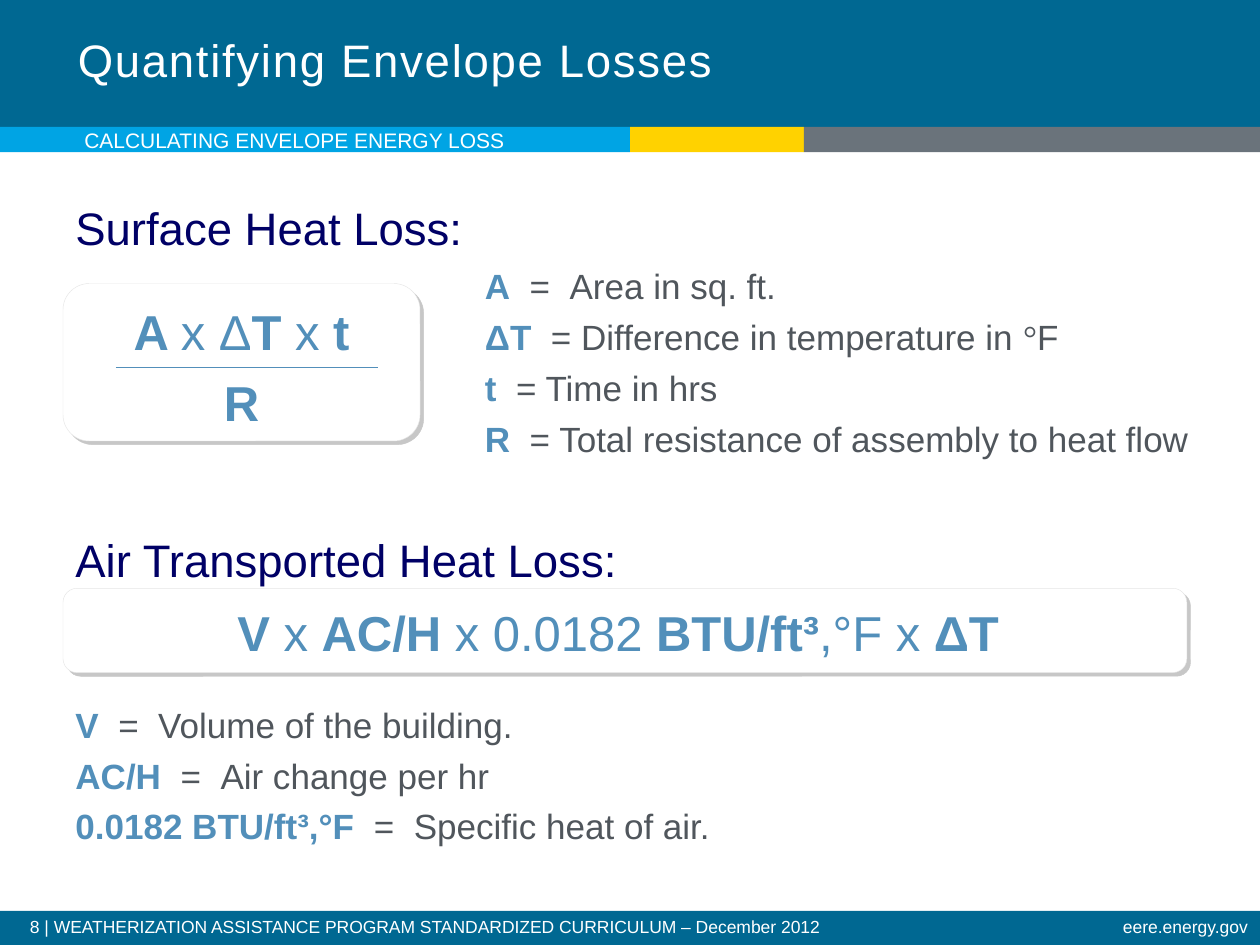
from lxml import etree
from pptx import Presentation
from pptx.dml.color import RGBColor
from pptx.enum.shapes import MSO_CONNECTOR as Connector, MSO_SHAPE as Shape
from pptx.enum.text import MSO_ANCHOR as Anchor, PP_ALIGN as Align
from pptx.oxml import parse_xml
from pptx.oxml.ns import nsdecls, qn
from pptx.util import Pt

WIDTH, HEIGHT = 720, 540
NAVY, TEAL, BLUE, GREY, WHITE = "000066", "006892", "528FBA", "50565C", "FFFFFF"

# Content: left, top, width, height, colour
BANDS = [
    (0, 0, WIDTH, 72.6, TEAL),
    (0, 520.5, WIDTH, 19.5, TEAL),
    (0, 72.6, 360, 14.4, "00A4E4"),
    (360, 72.6, 99.4, 14.4, "FFD200"),
    (459.4, 72.6, 260.6, 14.4, "6A737B"),
]
TITLE = "Quantifying Envelope Losses"
SECTION = "CALCULATING ENVELOPE ENERGY LOSS"
FOOTER = "8 | WEATHERIZATION ASSISTANCE PROGRAM STANDARDIZED CURRICULUM – December 2012"
SITE = "eere.energy.gov"
HEADINGS = [("Surface Heat Loss:", 110.5), ("Air Transported Heat Loss:", 300.5)]

# Formula lines: (text, bold) pairs
FORMULAS = [
    ((36, 162, 204, 90), [
        [("A ", True), ("x Δ", False), ("T ", True), ("x", False), (" t", True)],
        [("R", True)],
    ]),
    ((36, 336.2, 642.2, 48.2), [
        [("V", True), (" x ", False), ("AC/H ", True), ("x 0.0182 ", False),
         ("BTU/ft³", True), (",°F x ", False), ("ΔT ", True)],
    ]),
]
FRACTION_BAR = (66.2, 210.2, 216, 210.2)

# Definitions: term, wide gap after the equals sign, meaning
DEFINITIONS = [
    ((270, 145.4, 420, 119), [
        ("A", True, "Area in sq. ft."),
        ("ΔT", False, "Difference in temperature in °F"),
        ("t", False, "Time in hrs"),
        ("R", False, "Total resistance of assembly to heat flow"),
    ]),
    ((36, 396, 444, 89), [
        ("V", True, "Volume of the building."),
        ("AC/H", True, "Air change per hr"),
        ("0.0182 BTU/ft³,°F", True, "Specific heat of air."),
    ]),
]
WIDE = 5.56  # extra points that make one space of 20 pt as wide as two


def rgb(colour):
    return RGBColor.from_string(colour)


def apply(target, values):
    for name, value in values.items():
        setattr(target, name, value)


def add_run(paragraph, text, size, colour, bold=False, font="Arial", spacing=0):
    run = paragraph.add_run()
    run.text = text
    apply(run.font, {"name": font, "size": Pt(size), "bold": bold})
    run.font.color.rgb = rgb(colour)
    if spacing:
        run.font._element.set("spc", str(round(spacing * 100)))


def add_text(box, **frame_format):
    frame = slide.shapes.add_textbox(*map(Pt, box)).text_frame
    apply(frame, {"word_wrap": True, **frame_format})
    return frame


def add_line(frame, index, space):
    if index == 0:
        return frame.paragraphs[0]
    paragraph = frame.add_paragraph()
    paragraph.space_before = Pt(space)
    return paragraph


def add_panel(kind, box, colour):
    panel = slide.shapes.add_shape(kind, *map(Pt, box))
    panel.shadow.inherit = False
    panel.fill.solid()
    panel.fill.fore_color.rgb = rgb(colour)
    panel.line.fill.background()
    return panel


def cast_shadow(panel):
    effects = panel._element.spPr.find(qn("a:effectLst"))
    effects.append(parse_xml(
        f'<a:outerShdw {nsdecls("a")} blurRad="0" dist="{Pt(3)}" dir="2700000" '
        'algn="ctr" rotWithShape="0"><a:srgbClr val="808080">'
        '<a:alpha val="43000"/></a:srgbClr></a:outerShdw>'))


prs = Presentation()
prs.slide_width, prs.slide_height = Pt(WIDTH), Pt(HEIGHT)
slide = prs.slides.add_slide(prs.slide_layouts[6])

# Header and footer bands
for *band, colour in BANDS:
    add_panel(Shape.RECTANGLE, band, colour)

# Footer texts
for text, box, align in [(FOOTER, (10, 521.3, 574, 18.7), Align.LEFT),
                         (SITE, (431.3, 521.3, 288.7, 18.7), Align.RIGHT)]:
    line = add_text(box).paragraphs[0]
    apply(line, {"alignment": align, "line_spacing": 0.9})
    add_run(line, text, 10, WHITE)

# Title and section name
line = add_text((37.4, 0, 422.6, 71.3), vertical_anchor=Anchor.MIDDLE).paragraphs[0]
line.line_spacing = Pt(28)
add_run(line, TITLE, 26, WHITE, spacing=1)
no_margins = {f"margin_{side}": 0 for side in ("left", "top", "right", "bottom")}
section = add_text((48.2, 70.6, 491.8, 19.4), vertical_anchor=Anchor.MIDDLE, **no_margins)
add_run(section.paragraphs[0], SECTION, 12, WHITE)

# Headings
for text, top in HEADINGS:
    add_run(add_text((36, top, 660, 37)).paragraphs[0], text, 26, NAVY)

# Formula panels
for box, lines in FORMULAS:
    panel = add_panel(Shape.ROUNDED_RECTANGLE, box, WHITE)
    panel.line.color.rgb = rgb("E6E6E6")
    panel.line.width = Pt(0.25)
    cast_shadow(panel)
    frame = panel.text_frame
    apply(frame, {"word_wrap": True, "vertical_anchor": Anchor.TOP, "margin_top": Pt(6)})
    for index, parts in enumerate(lines):
        line = add_line(frame, index, 7)
        line.alignment = Align.CENTER
        for text, bold in parts:
            add_run(line, text, 28, BLUE, bold)

# Fraction bar
bar = slide.shapes.add_connector(Connector.STRAIGHT, *map(Pt, FRACTION_BAR))
bar.line.color.rgb = rgb(BLUE)
bar.line.width = Pt(0.5)
etree.SubElement(bar._element.spPr, qn("a:effectLst"))

# Definitions
for box, entries in DEFINITIONS:
    frame = add_text(box, margin_top=Pt(6))
    for index, (term, wide, meaning) in enumerate(entries):
        line = add_line(frame, index, 5)
        add_run(line, term, 20, BLUE, True)
        add_run(line, " ", 20, BLUE, True, spacing=WIDE)
        add_run(line, "=", 20, GREY)
        add_run(line, " ", 20, GREY, spacing=WIDE if wide else 0)
        before, degree, after = meaning.partition("°")
        add_run(line, before, 20, GREY)
        if degree:
            add_run(line, degree, 20, GREY, font="Times New Roman")
            add_run(line, after, 20, GREY)

prs.save("out.pptx")
